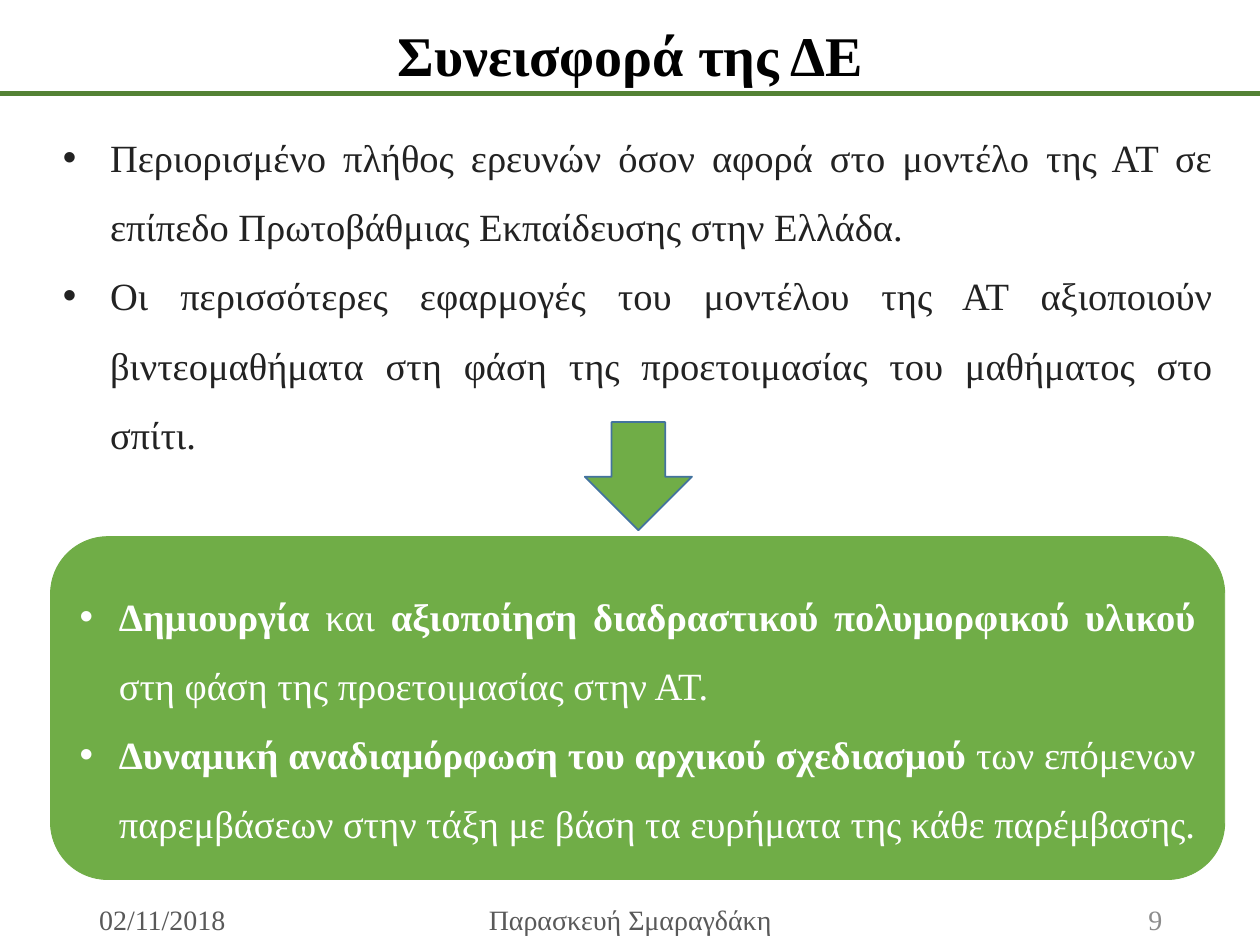
from dataclasses import dataclass

from lxml.etree import SubElement
from pptx import Presentation
from pptx.dml.color import RGBColor
from pptx.enum.shapes import MSO_CONNECTOR, MSO_SHAPE
from pptx.enum.text import MSO_ANCHOR, PP_ALIGN
from pptx.oxml.ns import qn
from pptx.util import Cm, Pt

HUES = {
    "green": "70AD47",
    "dark": "548235",
    "blue": "43739E",
    "white": "FFFFFF",
    "black": "000000",
    "ink": "222222",
    "gray": "595959",
    "pale": "8C8C8C",
}
FONT = "Times New Roman"
WIDE, HIGH = 25.4, 19.05
EDGE, SPAN = 1.02, 23.67  # left and width shared by both text blocks


@dataclass
class Box:
    left: float
    top: float
    width: float
    height: float

    def size(self) -> tuple:
        return Cm(self.left), Cm(self.top), Cm(self.width), Cm(self.height)


@dataclass
class Foot:
    text: str
    left: float
    width: float
    align: PP_ALIGN
    hue: str


FACTS = [
    "Περιορισμένο πλήθος ερευνών όσον αφορά στο μοντέλο της ΑΤ σε "
    "επίπεδο Πρωτοβάθμιας Εκπαίδευσης στην Ελλάδα.",
    "Οι περισσότερες εφαρμογές του μοντέλου της ΑΤ αξιοποιούν "
    "βιντεομαθήματα στη φάση της προετοιμασίας του μαθήματος στο σπίτι.",
]
GAINS = [
    "*Δημιουργία* και *αξιοποίηση διαδραστικού πολυμορφικού υλικού* "
    "στη φάση της προετοιμασίας στην ΑΤ.",
    "*Δυναμική αναδιαμόρφωση του αρχικού σχεδιασμού *των επόμενων "
    "παρεμβάσεων στην τάξη με βάση τα ευρήματα της κάθε παρέμβασης.",
]
FEET = [
    Foot("02/11/2018", 1.75, 5.72, PP_ALIGN.LEFT, "gray"),
    Foot("Παρασκευή Σμαραγδάκη", 8.41, 8.59, PP_ALIGN.CENTER, "gray"),
    Foot("9", 17.96, 5.72, PP_ALIGN.RIGHT, "pale"),
]


def tint(name: str) -> RGBColor:
    return RGBColor.from_string(HUES[name])


def write(shape, *texts: str, size: float, hue: str, align=PP_ALIGN.JUSTIFY,
          anchor=MSO_ANCHOR.TOP, wrap: bool = True, space: float = 1,
          indent: float = 0) -> None:
    """Write one paragraph per text; *stars* mark bold, an indent adds bullets."""
    frame = shape.text_frame
    frame.word_wrap = wrap
    frame.vertical_anchor = anchor
    for row, text in enumerate(texts):
        para = frame.add_paragraph() if row else frame.paragraphs[0]
        para.alignment = align
        para.line_spacing = space
        if indent:
            props = para._p.get_or_add_pPr()
            props.set("marL", str(Cm(indent)))
            props.set("indent", str(-Cm(indent)))
            SubElement(props, qn("a:buFont"), typeface="Arial")
            SubElement(props, qn("a:buChar"), char="•")
        for turn, part in enumerate(text.split("*")):
            if part:
                run = para.add_run()
                run.text = part
                run.font.name = FONT
                run.font.size = Pt(size)
                run.font.bold = turn % 2 == 1
                run.font.color.rgb = tint(hue)


def block(slide, kind: MSO_SHAPE, box: Box, edge: str, weight: float):
    shape = slide.shapes.add_shape(kind, *box.size())
    shape.shadow.inherit = False
    shape.fill.solid()
    shape.fill.fore_color.rgb = tint("green")
    shape.line.color.rgb = tint(edge)
    shape.line.width = Pt(weight)
    return shape


def label(slide, box: Box, *texts: str, **style) -> None:
    write(slide.shapes.add_textbox(*box.size()), *texts, **style)


def rule(slide, top: float) -> None:
    line = slide.shapes.add_connector(
        MSO_CONNECTOR.STRAIGHT, 0, Cm(top), Cm(WIDE), Cm(top))
    line.line.color.rgb = tint("dark")
    line.line.width = Pt(3)
    SubElement(line._element.spPr, qn("a:effectLst"))


def main() -> None:
    deck = Presentation()
    deck.slide_width, deck.slide_height = Cm(WIDE), Cm(HIGH)
    slide = deck.slides.add_slide(deck.slide_layouts[6])

    panel = block(slide, MSO_SHAPE.ROUNDED_RECTANGLE,
                  Box(EDGE, 10.82, SPAN, 6.91), "green", 0.5)
    write(panel, *GAINS, size=22, hue="white", anchor=MSO_ANCHOR.MIDDLE,
          space=1.5, indent=0.79)
    label(slide, Box(EDGE, 2.11, SPAN, 11.15), *FACTS,
          size=22, hue="ink", space=1.5, indent=0.95)
    block(slide, MSO_SHAPE.DOWN_ARROW, Box(11.79, 8.51, 2.16, 2.18), "blue", 1)

    rule(slide, 1.88)
    for foot in FEET:
        label(slide, Box(foot.left, 18.03, foot.width, 1.02), foot.text,
              size=16, hue=foot.hue, align=foot.align, anchor=MSO_ANCHOR.MIDDLE)
    label(slide, Box(7.72, 0.28, 9.98, 1.63), "*Συνεισφορά της ΔΕ*",
          size=32, hue="black", align=PP_ALIGN.CENTER, wrap=False)

    deck.save("out.pptx")


if __name__ == "__main__":
    main()
